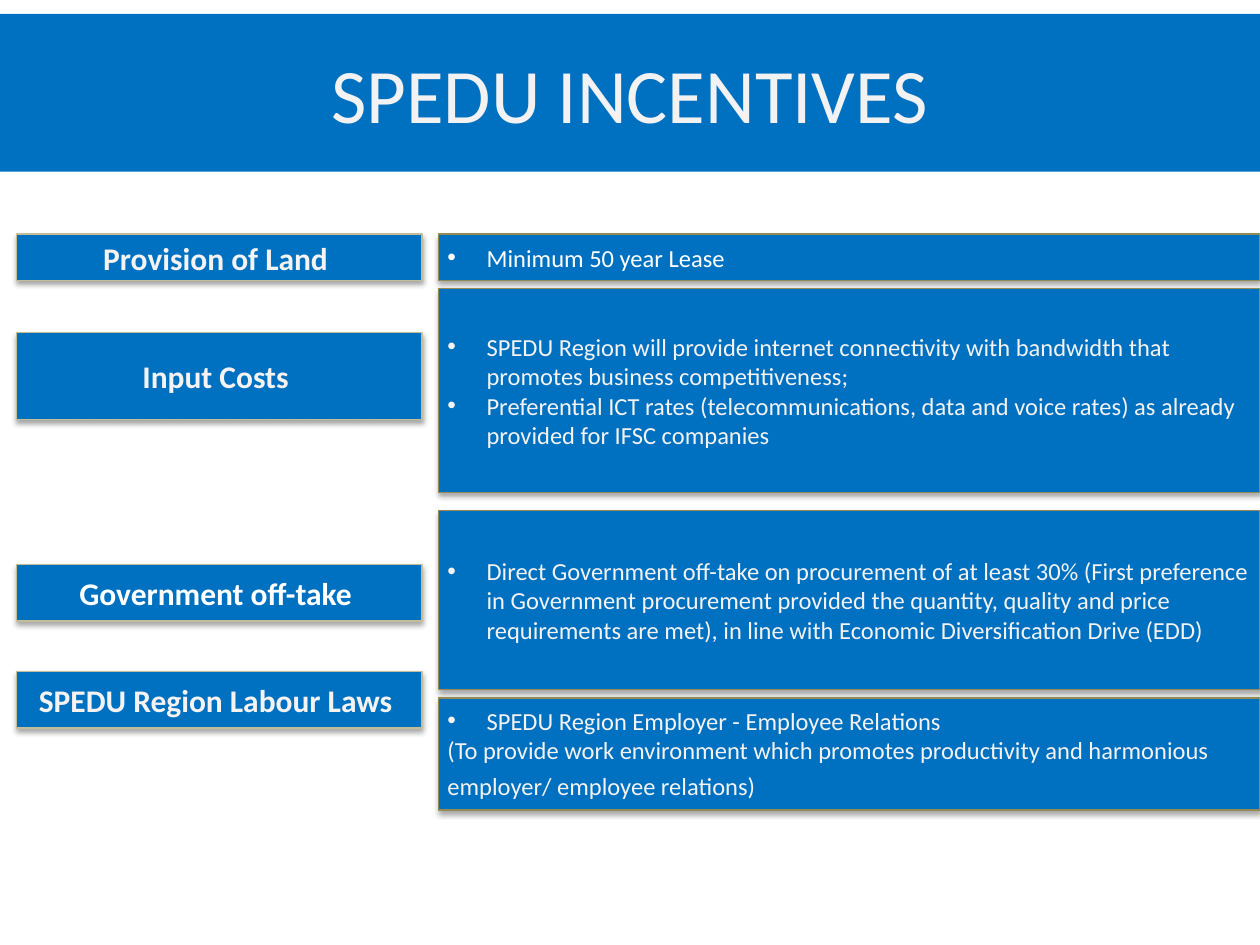
from lxml.etree import SubElement
from pptx import Presentation
from pptx.dml.color import RGBColor
from pptx.enum.shapes import MSO_SHAPE as Shape
from pptx.enum.text import MSO_ANCHOR as Anchor, MSO_AUTO_SIZE as AutoSize, PP_ALIGN as Align
from pptx.oxml.ns import qn
from pptx.util import Cm, Pt

COLORS = {
    "blue": "0070C0",
    "label_edge": "C4BD97",
    "detail_edge": "948A54",
    "title": "F2F2F2",
    "soft": "F4F3F2",
    "white": "FFFFFF",
    "black": "000000",
}
LABEL_LEFT, LABEL_WIDTH = 0.33, 8.18
DETAIL_LEFT, DETAIL_WIDTH = 8.84, 16.56

# label, its top, height and colour; details top, height and colour; bullets; closing remark
INCENTIVES = [
    ("Provision of Land ", 4.72, 0.94, "soft", 4.72, 0.94, "white",
     ["Minimum 50 year Lease"], None),
    ("Input Costs ", 6.71, 1.75, "soft", 5.82, 4.11, "soft",
     ["SPEDU Region will provide internet connectivity with bandwidth that "
      "promotes business competitiveness;",
      "Preferential ICT rates (telecommunications, data and voice rates) as "
      "already provided for IFSC companies"], None),
    ("Government off-take ", 11.38, 1.14, "white", 10.29, 3.61, "soft",
     ["Direct Government off-take on procurement of at least 30% (First preference "
      "in Government procurement provided the quantity, quality and price "
      "requirements are met), in line with Economic Diversification Drive (EDD)"], None),
    ("SPEDU Region Labour Laws ", 13.54, 1.14, "soft", 14.07, 2.26, "soft",
     ["SPEDU Region Employer - Employee Relations"],
     "(To provide work environment which promotes productivity and harmonious "
     "employer/ employee relations) "),
]


class IncentiveSlide:
    font = "Calibri"

    def __init__(self, deck):
        self.slide = deck.slides.add_slide(deck.slide_layouts[5])

    def color(self, name):
        return RGBColor.from_string(COLORS[name])

    def style_run(self, run, size, color, bold=False):
        run.font.name = self.font
        run.font.size = Pt(size)
        run.font.bold = bold
        run.font.color.rgb = self.color(color)

    def fill_blue(self, shape):
        shape.fill.solid()
        shape.fill.fore_color.rgb = self.color("blue")

    def title(self, text, left, top, width, height):
        banner = self.slide.shapes.title
        banner.left, banner.top = Cm(left), Cm(top)
        banner.width, banner.height = Cm(width), Cm(height)
        self.fill_blue(banner)
        frame = banner.text_frame
        frame.text = text
        frame.auto_size = AutoSize.NONE
        frame.vertical_anchor = Anchor.MIDDLE
        frame.paragraphs[0].alignment = Align.CENTER
        self.style_run(frame.paragraphs[0].runs[0], 44, "title")

    def cast_shadow(self, shape):
        shape.shadow.inherit = False
        effects = shape._element.spPr.find(qn("a:effectLst"))
        shadow = SubElement(effects, qn("a:outerShdw"), blurRad=str(Pt(3.1)),
                            dist=str(Pt(1.8)), dir="5400000", rotWithShape="0")
        tint = SubElement(shadow, qn("a:srgbClr"), val=COLORS["black"])
        SubElement(tint, qn("a:alpha"), val="35000")

    def box(self, left, top, width, height, edge):
        """Add a shadowed blue box and return its text frame."""
        box = self.slide.shapes.add_shape(
            Shape.RECTANGLE, Cm(left), Cm(top), Cm(width), Cm(height))
        self.fill_blue(box)
        box.line.color.rgb = self.color(edge)
        box.line.width = Pt(0.75)
        self.cast_shadow(box)
        frame = box.text_frame
        frame.word_wrap = True
        frame.vertical_anchor = Anchor.MIDDLE
        frame.margin_left = frame.margin_right = Cm(0.18)
        frame.margin_top = frame.margin_bottom = Cm(0.1)
        return frame

    def label(self, text, top, height, color):
        frame = self.box(LABEL_LEFT, top, LABEL_WIDTH, height, "label_edge")
        frame.text = text
        frame.paragraphs[0].alignment = Align.CENTER
        self.style_run(frame.paragraphs[0].runs[0], 18, color, bold=True)

    def add_bullet(self, paragraph):
        props = paragraph._p.get_or_add_pPr()
        props.set("marL", str(Cm(0.79)))
        props.set("indent", str(-Cm(0.79)))
        SubElement(props, qn("a:buFont"), typeface="Arial")
        SubElement(props, qn("a:buChar"), char="•")

    def details(self, bullets, remark, top, height, color):
        frame = self.box(DETAIL_LEFT, top, DETAIL_WIDTH, height, "detail_edge")
        frame.text = "\n".join(bullets + ([remark] if remark else []))
        for number, paragraph in enumerate(frame.paragraphs):
            paragraph.alignment = Align.LEFT
            if number < len(bullets):
                self.add_bullet(paragraph)
            self.style_run(paragraph.runs[0], 14, color)
        if remark:
            tab = frame.paragraphs[-1].add_run()
            tab.text = "\t"
            self.style_run(tab, 18, "black")


def main():
    deck = Presentation()
    deck.slide_width, deck.slide_height = Cm(25.4), Cm(19.05)
    page = IncentiveSlide(deck)
    page.title("SPEDU INCENTIVES", 0, 0.28, 25.4, 3.18)
    for (name, label_top, label_height, label_color,
         top, height, color, bullets, remark) in INCENTIVES:
        page.label(name, label_top, label_height, label_color)
        page.details(bullets, remark, top, height, color)
    deck.save("out.pptx")


if __name__ == "__main__":
    main()
